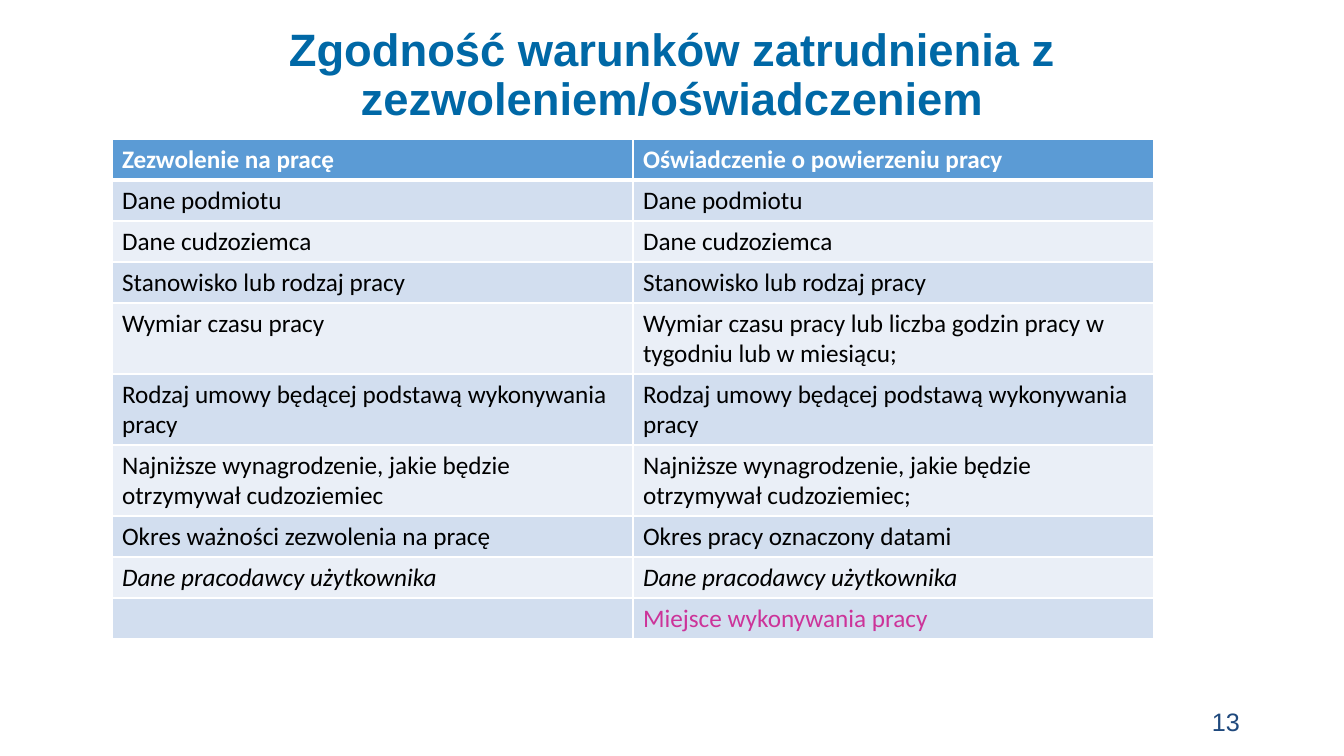
from lxml import etree
from pptx import Presentation
from pptx.dml.color import RGBColor
from pptx.enum.text import MSO_ANCHOR, MSO_AUTO_SIZE, PP_ALIGN
from pptx.oxml.ns import qn
from pptx.util import Emu, Pt

PX = 914400 / 100.8
CENTER = PP_ALIGN.CENTER
MIDDLE = MSO_ANCHOR.MIDDLE
NO_AUTOFIT = MSO_AUTO_SIZE.NONE
TITLE_ONLY = 5

COLORS = {
    "title": "0068A6",
    "number": "1F497D",
    "header": "5B9BD5",
    "odd": "D2DEEF",
    "even": "EAEFF7",
    "white": "FFFFFF",
    "text": "000000",
    "accent": "CC3399",
}
TITLE_FONT = {"name": "Arial", "size": Pt(32.4), "bold": True}
NUMBER_FONT = {"name": "Arial", "size": Pt(18)}
CELL_FONT = {"name": "Calibri", "size": Pt(18), "bold": False, "italic": False}
ROW_STYLES = {
    "header": (CELL_FONT | {"bold": True}, "white"),
    "plain": (CELL_FONT, "text"),
    "italic": (CELL_FONT | {"italic": True}, "text"),
    "accent": (CELL_FONT, "accent"),
}

SINGLE, DOUBLE = 41, 71
REQUIREMENTS = [
    ("header", SINGLE, "Zezwolenie na pracę", "Oświadczenie o powierzeniu pracy"),
    ("plain", SINGLE, "Dane podmiotu", "Dane podmiotu"),
    ("plain", SINGLE, "Dane cudzoziemca", "Dane cudzoziemca"),
    ("plain", SINGLE, "Stanowisko lub rodzaj pracy", "Stanowisko lub rodzaj pracy"),
    ("plain", DOUBLE, "Wymiar czasu pracy",
     "Wymiar czasu pracy lub liczba godzin pracy w tygodniu lub w miesiącu;"),
    ("plain", DOUBLE, "Rodzaj umowy będącej podstawą wykonywania pracy",
     "Rodzaj umowy będącej podstawą wykonywania pracy"),
    ("plain", DOUBLE, "Najniższe wynagrodzenie, jakie będzie otrzymywał cudzoziemiec",
     "Najniższe wynagrodzenie, jakie będzie otrzymywał cudzoziemiec;"),
    ("plain", SINGLE, "Okres ważności zezwolenia na pracę", "Okres pracy oznaczony datami"),
    ("italic", SINGLE, "Dane pracodawcy użytkownika", "Dane pracodawcy użytkownika"),
    ("accent", SINGLE, "", "Miejsce wykonywania pracy"),
]


def px(length):
    return Emu(round(length * PX))


def rgb(name):
    return RGBColor.from_string(COLORS[name])


def write(paragraph, text, font_format, color):
    run = paragraph.add_run()
    run.text = text
    for attribute, value in font_format.items():
        setattr(run.font, attribute, value)
    run.font.color.rgb = rgb(color)


def add_title(slide, box, text):
    title = slide.shapes.title
    for side, length in zip(("left", "top", "width", "height"), box):
        setattr(title, side, px(length))
    frame = title.text_frame
    frame.word_wrap = True
    frame.auto_size = NO_AUTOFIT
    frame.vertical_anchor = MIDDLE
    paragraph = frame.paragraphs[0]
    paragraph.alignment = CENTER
    paragraph.line_spacing = 0.9
    write(paragraph, text, TITLE_FONT, "title")


def add_page_number(slide, box, number):
    frame = slide.shapes.add_textbox(*map(px, box)).text_frame
    frame.word_wrap = True
    frame.vertical_anchor = MIDDLE
    write(frame.paragraphs[0], number, NUMBER_FONT, "number")


def add_borders(cell, top, bottom):
    """Draw white cell borders; top and bottom are widths in points."""
    properties = cell._tc.get_or_add_tcPr()
    for side, width in (("L", 1), ("R", 1), ("T", top), ("B", bottom)):
        line = etree.SubElement(properties, qn(f"a:ln{side}"), w=str(Pt(width)))
        fill = etree.SubElement(line, qn("a:solidFill"))
        etree.SubElement(fill, qn("a:srgbClr"), val=COLORS["white"])


def add_requirements(slide, box, requirements):
    left, top, width, height = box
    columns = 2
    table = slide.shapes.add_table(
        len(requirements), columns, px(left), px(top), px(width), px(height)).table
    for column in table.columns:
        column.width = px(width / columns)
    for index, (style, row_height, *texts) in enumerate(requirements):
        table.rows[index].height = px(row_height)
        font_format, color = ROW_STYLES[style]
        fill = "header" if index == 0 else ("even", "odd")[index % 2]
        for cell, text in zip(table.rows[index].cells, texts):
            add_borders(cell, 3 if index == 1 else 1, 3 if index == 0 else 1)
            cell.fill.solid()
            cell.fill.fore_color.rgb = rgb(fill)
            if text:
                write(cell.text_frame.paragraphs[0], text, font_format, color)


def main():
    presentation = Presentation()
    presentation.slide_width, presentation.slide_height = px(1344), px(756)
    slide = presentation.slides.add_slide(presentation.slide_layouts[TITLE_ONLY])
    add_page_number(slide, (1202, 701, 76, 40), "13")
    add_title(slide, (67, 28, 1210, 96),
              "Zgodność warunków zatrudnienia z zezwoleniem/oświadczeniem")
    table_height = sum(row[1] for row in REQUIREMENTS)
    add_requirements(slide, (112, 139, 1042, table_height), REQUIREMENTS)
    presentation.save("out.pptx")


if __name__ == "__main__":
    main()
